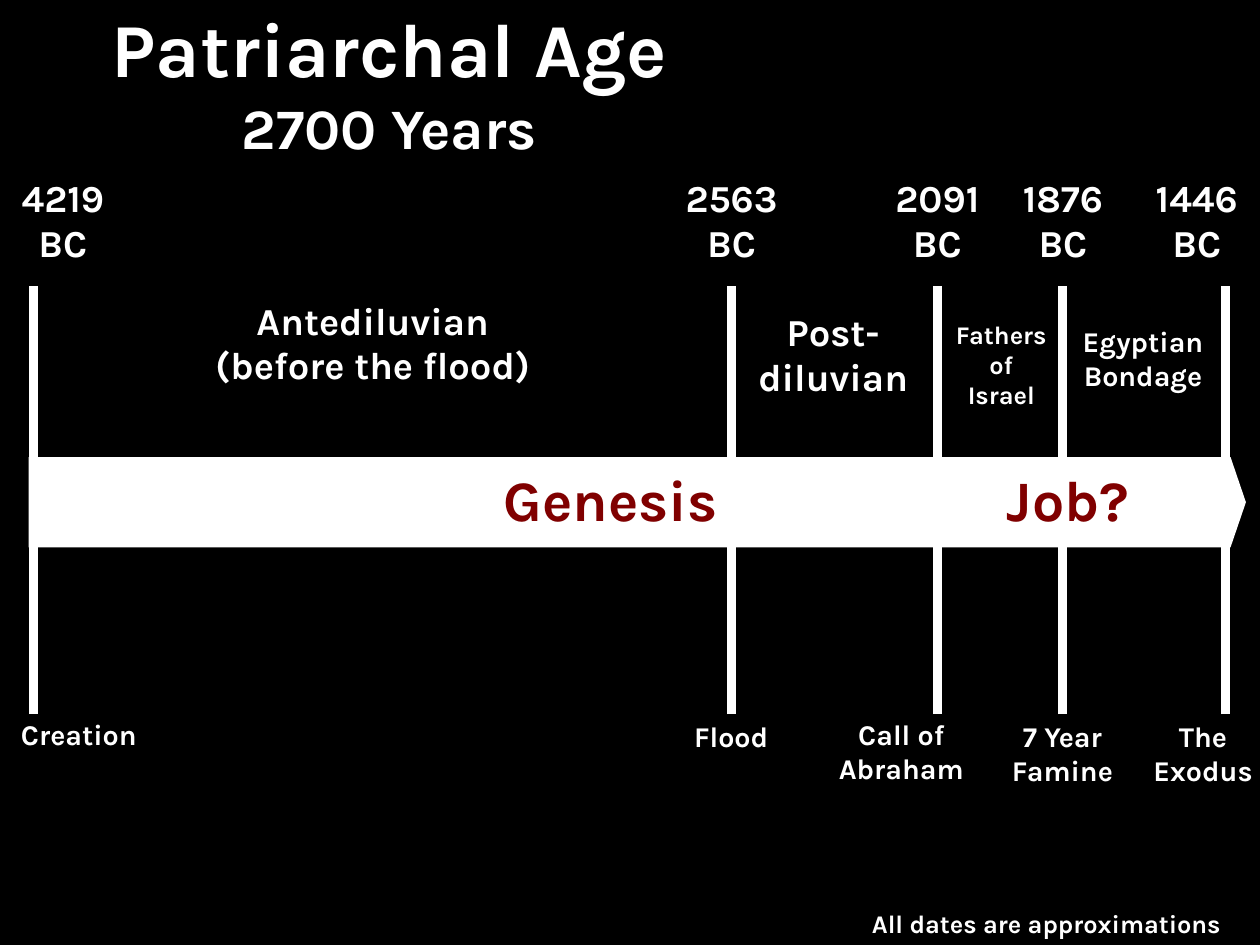
from dataclasses import dataclass

from lxml.etree import SubElement
from pptx import Presentation
from pptx.dml.color import RGBColor
from pptx.enum.shapes import MSO_CONNECTOR as Connector, MSO_SHAPE as Preset
from pptx.enum.text import MSO_ANCHOR as Anchor, MSO_AUTO_SIZE as AutoSize, PP_ALIGN as Align
from pptx.oxml.ns import qn
from pptx.shapes.base import BaseShape
from pptx.slide import Slide
from pptx.util import Cm, Pt

WIDTH, HEIGHT = Cm(28), Cm(21)


@dataclass(frozen=True)
class Theme:
    font: str = "Karla"
    ground: RGBColor = RGBColor(0x00, 0x00, 0x00)
    light: RGBColor = RGBColor(0xFF, 0xFF, 0xFF)
    book: RGBColor = RGBColor(0x80, 0x00, 0x00)
    title: int = 48
    large: int = 36
    medium: int = 24
    small: int = 18
    note: int = 16
    line_spacing: float = 0.98
    line_height: float = 1.16
    rule: float = 5.75


THEME = Theme()


@dataclass(frozen=True)
class Label:
    """A text box; centre, top and width are percentages of the slide."""
    text: str
    centre: float
    top: float
    width: float
    sizes: tuple[int, ...]
    color: RGBColor = THEME.light
    align: Align = Align.CENTER


@dataclass(frozen=True)
class Milestone:
    """A dated mark on the timeline, in percentages of the slide."""
    line: float
    year: str
    year_centre: float
    event: str
    event_centre: float
    event_top: float
    event_width: float


YEAR_TOP, YEAR_WIDTH = 18.14, 10.16
UPPER_RULE, LOWER_RULE = (48.37, 30.23), (75.57, 57.44)
HIGH_EVENT, LOW_EVENT = 75.45, 75.7
BOOK_TOP = 48.85
MEDIUM, SMALL = (THEME.medium,), (THEME.small,)
LARGE, NOTE = (THEME.large,), (THEME.note,)

TITLE = Label("Patriarchal Age\n2700 Years", 30.9, 0, 54.54, (THEME.title, THEME.large))
MILESTONES = [
    Milestone(2.63, "4219", 4.99, "Creation", 6.26, HIGH_EVENT, 12.7),
    Milestone(58.06, "2563", 58.06, "Flood", 58.03, LOW_EVENT, 8.8),
    Milestone(74.39, "2091", 74.39, "Call of\nAbraham", 71.53, HIGH_EVENT, 13.34),
    Milestone(84.36, "1876", 84.36, "7 Year\nFamine", 84.32, LOW_EVENT, 11.16),
    Milestone(97.25, "1446", 94.98, "The\nExodus", 95.48, LOW_EVENT, 10.98),
]
LABELS = [
    Label("Antediluvian\n(before the flood)", 29.58, 31.08, 32.12, MEDIUM),
    Label("Post-\ndiluvian", 66.13, 32.29, 15.43, MEDIUM),
    Label("Fathers\nof\nIsrael", 79.47, 33.37, 10.53, NOTE),
    Label("Egyptian\nBondage", 90.72, 33.86, 13.07, SMALL),
    Label("Genesis", 50.03, BOOK_TOP, 21.87, LARGE, THEME.book, Align.LEFT),
    Label("Job?", 85.27, BOOK_TOP, 12.52, LARGE, THEME.book, Align.LEFT),
    Label("All dates are approximations", 83.05, 95.65, 34.57, NOTE),
]


def across(percent: float) -> int:
    return round(WIDTH * percent / 100)


def down(percent: float) -> int:
    return round(HEIGHT * percent / 100)


def write(box: BaseShape, label: Label) -> None:
    """Place a box and set its text; the last size serves all remaining lines."""
    frame = box.text_frame
    frame.text = label.text
    frame.auto_size = AutoSize.NONE
    frame.word_wrap = False
    frame.vertical_anchor = Anchor.TOP
    points = 0
    for index, para in enumerate(frame.paragraphs):
        size = label.sizes[min(index, len(label.sizes) - 1)]
        points += size * THEME.line_height
        para.alignment = label.align
        para.line_spacing = THEME.line_spacing
        for span in para.runs:
            span.font.name = THEME.font
            span.font.size = Pt(size)
            span.font.bold = True
            span.font.color.rgb = label.color
    box.left = across(label.centre - label.width / 2)
    box.top = down(label.top)
    box.width = across(label.width)
    box.height = Pt(points) + frame.margin_top + frame.margin_bottom


def add_label(page: Slide, label: Label) -> None:
    write(page.shapes.add_textbox(0, 0, 0, 0), label)


def add_rule(page: Slide, column: float, start: float, end: float) -> None:
    rule = page.shapes.add_connector(
        Connector.STRAIGHT, across(column), down(start), across(column), down(end))
    rule.line.color.rgb = THEME.light
    rule.line.width = Pt(THEME.rule)
    SubElement(rule._element.spPr, qn("a:effectLst"))


def add_arrow(page: Slide) -> None:
    arrow = page.shapes.add_shape(
        Preset.PENTAGON, across(2.27), down(48.37), across(96.61), down(9.55))
    arrow.adjustments[0] = 0.17
    arrow.shadow.inherit = False
    arrow.fill.solid()
    arrow.fill.fore_color.rgb = THEME.light
    arrow.line.fill.background()


def add_milestone(page: Slide, mark: Milestone) -> None:
    for start, end in (UPPER_RULE, LOWER_RULE):
        add_rule(page, mark.line, start, end)
    add_label(page, Label(f"{mark.year}\nBC", mark.year_centre, YEAR_TOP, YEAR_WIDTH, MEDIUM))
    add_label(page, Label(mark.event, mark.event_centre, mark.event_top,
                          mark.event_width, SMALL))


def main() -> None:
    deck = Presentation()
    deck.slide_width, deck.slide_height = WIDTH, HEIGHT
    page = deck.slides.add_slide(deck.slide_layouts.get_by_name("Title Only"))
    page.background.fill.solid()
    page.background.fill.fore_color.rgb = THEME.ground
    write(page.shapes.title, TITLE)
    for mark in MILESTONES:
        add_milestone(page, mark)
    add_arrow(page)
    for label in LABELS:
        add_label(page, label)
    deck.save("out.pptx")


if __name__ == "__main__":
    main()
